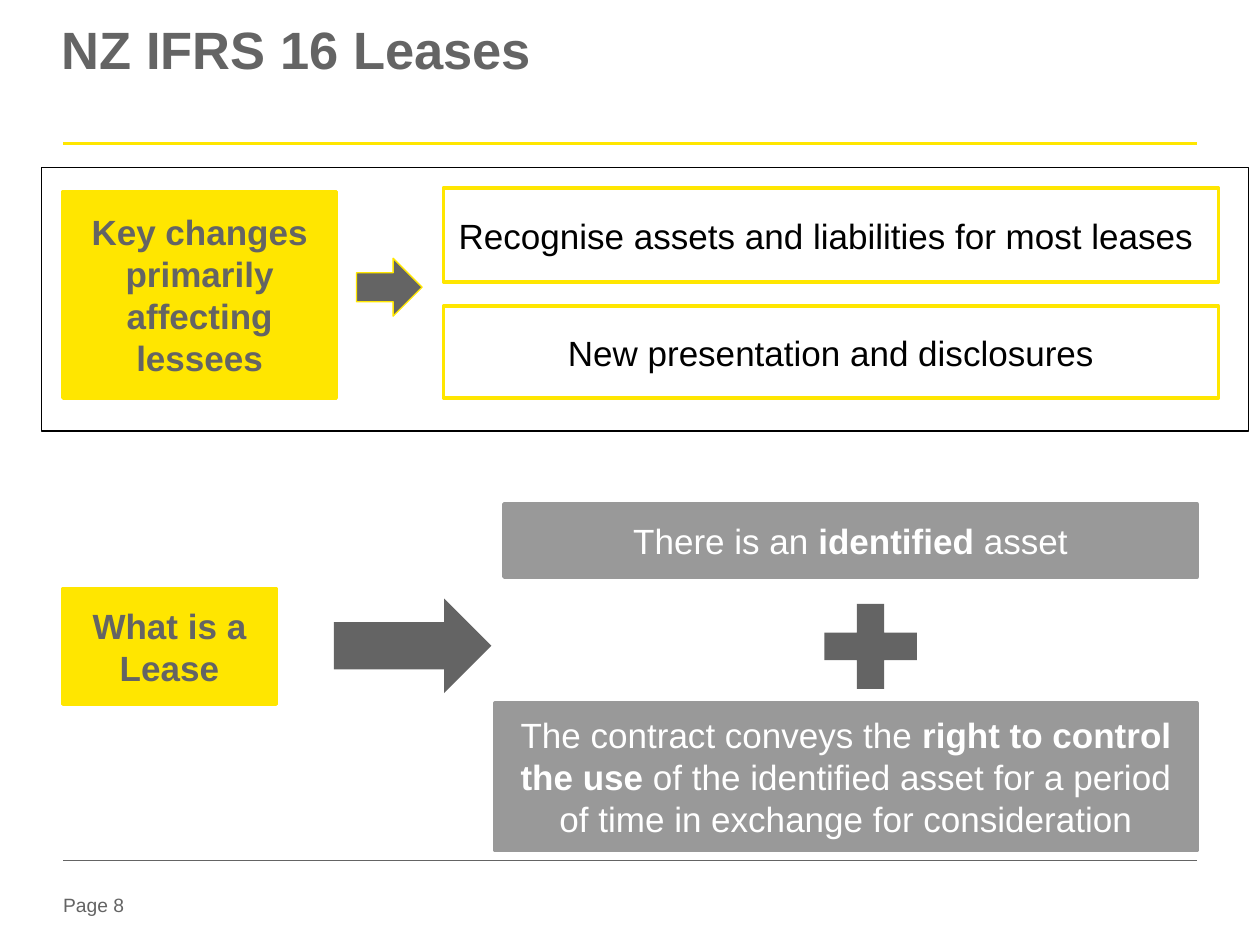
from lxml.etree import SubElement
from pptx import Presentation
from pptx.dml.color import RGBColor
from pptx.enum.shapes import MSO_CONNECTOR as Connector, MSO_SHAPE as Shape
from pptx.enum.text import MSO_ANCHOR as Anchor, MSO_AUTO_SIZE as AutoSize, PP_ALIGN as Align
from pptx.oxml.ns import qn
from pptx.util import Emu, Pt

EMU_PER_PX = 9144  # 100 px to the inch
YELLOW, DARK, GREY, WHITE, BLACK = "FFE600", "646464", "999999", "FFFFFF", "000000"


def px(length):
    return Emu(length * EMU_PER_PX)


def rgb(value):
    return RGBColor.from_string(value)


class SlideBuilder:
    font_name = "Arial"

    def __init__(self, deck):
        self.slide = deck.slides.add_slide(deck.slide_layouts[5])

    def set_text(self, frame, pieces, size, color, align=Align.CENTER, anchor=Anchor.MIDDLE, inset=None):
        """Fill a text frame with one paragraph of (text, bold) pieces."""
        settings = {"word_wrap": True, "auto_size": AutoSize.NONE, "vertical_anchor": anchor}
        if inset is not None:
            for side in ("left", "top", "right", "bottom"):
                settings[f"margin_{side}"] = px(inset)
        for name, value in settings.items():
            setattr(frame, name, value)
        para = frame.paragraphs[0]
        para.alignment = align
        for text, bold in pieces:
            span = para.add_run()
            span.text = text
            for name, value in {"name": self.font_name, "size": Pt(size), "bold": bold}.items():
                setattr(span.font, name, value)
            span.font.color.rgb = rgb(color)
        return para

    def title(self, text, left, top, width, height):
        box = self.slide.shapes.title
        place = {"left": left, "top": top, "width": width, "height": height}
        for name, value in place.items():
            setattr(box, name, px(value))
        para = self.set_text(box.text_frame, [(text, True)], 30, DARK, Align.LEFT, Anchor.TOP, 0)
        para.line_spacing = 0.82

    def label(self, text, size, *place):
        box = self.slide.shapes.add_textbox(*map(px, place))
        self.set_text(box.text_frame, [(text, False)], size, DARK, Align.LEFT, Anchor.TOP, 0)

    def rule(self, left, right, y, color, weight):
        line = self.slide.shapes.add_connector(Connector.STRAIGHT, px(left), px(y), px(right), px(y))
        line.line.color.rgb = rgb(color)
        line.line.width = Pt(weight)
        SubElement(line._element.spPr, qn("a:effectLst"))

    def shape(self, kind, *place, fill=None, line=None, weight=2):
        box = self.slide.shapes.add_shape(kind, *map(px, place))
        box.shadow.inherit = False
        if fill:
            box.fill.solid()
            box.fill.fore_color.rgb = rgb(fill)
        else:
            box.fill.background()
        if line:
            box.line.color.rgb = rgb(line)
            box.line.width = Pt(weight)
        else:
            box.line.fill.background()
        return box

    def text_box(self, pieces, *place, color, line, fill=None):
        box = self.shape(Shape.RECTANGLE, *place, fill=fill, line=line)
        self.set_text(box.text_frame, pieces, 20, color)


def main():
    deck = Presentation()
    deck.slide_width, deck.slide_height = px(1000), px(750)
    page = SlideBuilder(deck)

    # Title, rules and page number
    page.label("Page 8", 11, 50, 709, 79, 22)
    page.rule(50, 950, 114, YELLOW, 1.5)
    page.rule(50, 950, 683, DARK, 0.25)
    page.title("NZ IFRS 16 Leases", 49, 22, 926, 94)

    # What is a lease: two conditions joined by a plus
    grey = {"fill": GREY, "line": GREY, "color": WHITE}
    yellow = {"fill": YELLOW, "line": YELLOW, "color": DARK}
    page.text_box([("There is an ", False), ("identified", True), (" asset", False)],
                  400, 400, 550, 58, **grey)
    page.text_box([("The contract conveys the ", False), ("right to control the use", True),
                   (" of the identified asset for a period of time in exchange for consideration", False)],
                  393, 558, 557, 117, **grey)
    page.shape(Shape.MATH_PLUS, 641, 467, 100, 92, fill=DARK)
    page.text_box([("What is a Lease", True)], 50, 467, 169, 92, **yellow)
    page.shape(Shape.RIGHT_ARROW, 265, 475, 125, 75, fill=DARK)

    # Key changes for lessees, inside a frame
    page.text_box([("Key changes primarily affecting lessees", True)], 50, 152, 217, 164, **yellow)
    changes = [("Recognise assets and liabilities for most leases ", 149, 75),
               ("New presentation and disclosures", 243, 73)]
    for text, top, height in changes:
        page.text_box([(text, False)], 352, top, 615, height, color=BLACK, line=YELLOW)
    page.shape(Shape.RIGHT_ARROW, 283, 205, 52, 46, fill=DARK, line=YELLOW, weight=0.75)
    page.shape(Shape.RECTANGLE, 33, 133, 958, 209, line=BLACK, weight=0.75)

    deck.save("out.pptx")


if __name__ == "__main__":
    main()
